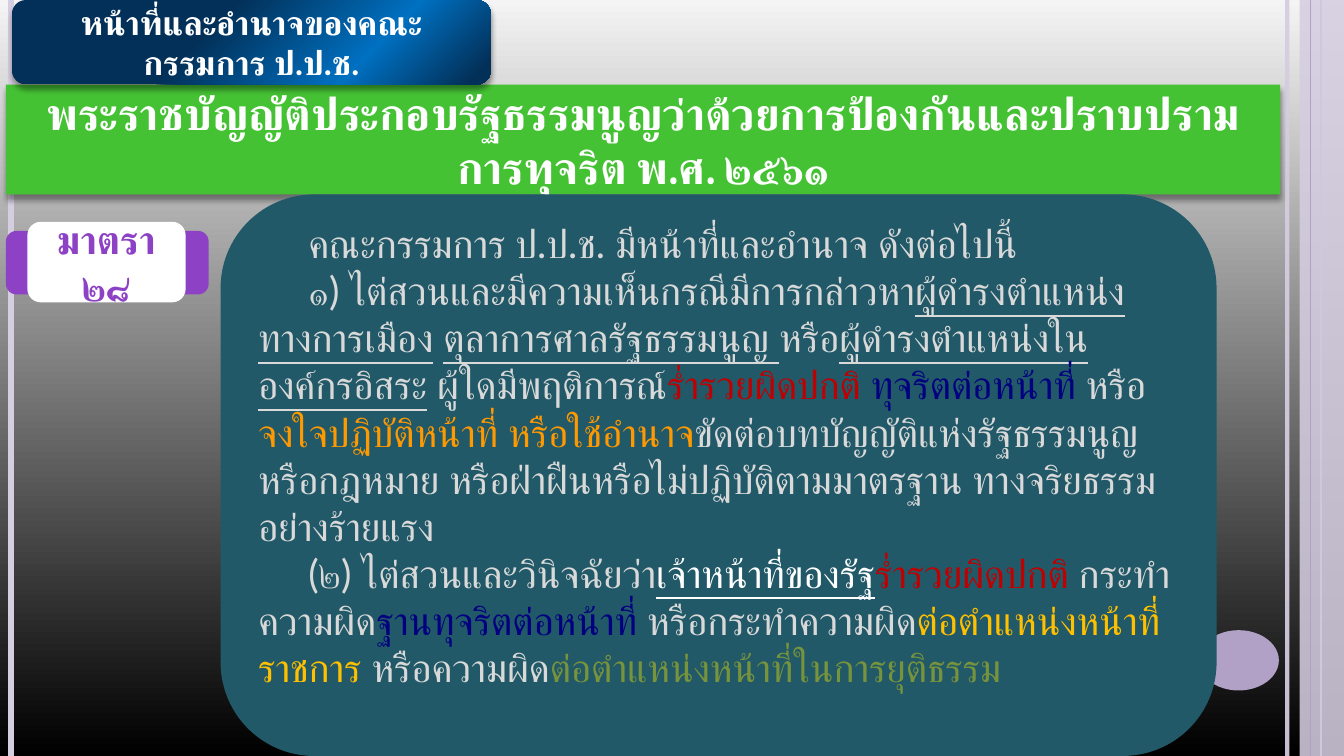
from copy import deepcopy
from dataclasses import dataclass

from lxml import etree
from pptx import Presentation
from pptx.dml.color import RGBColor
from pptx.enum import shapes, text
from pptx.oxml import ns
from pptx.util import Cm, Pt


@dataclass(frozen=True)
class Theme:
    heading: str = "Cambria"
    body: str = "Lato"
    title_pt: int = 32
    body_pt: int = 28
    tag_pt: int = 24
    white: str = "FFFFFF"
    light: str = "D9D9D9"
    green: str = "45C234"
    purple: str = "8D42C6"
    teal: str = "215968"
    lilac: str = "B2A1C7"
    pale: str = "D5CDE0"
    red: str = "C00000"
    navy: str = "000080"
    orange: str = "FF9900"
    gold: str = "FFC000"
    olive: str = "77933C"
    back: tuple = ((0, "000000"), (100, "F4F4F4"))
    tag: tuple = ((40, "023058"), (73, "0070C0"), (96, "023058"))


T = Theme()
WIDTH, HEIGHT = 33.87, 19.05

TITLE = "พระราชบัญญัติประกอบรัฐธรรมนูญว่าด้วยการป้องกันและปราบปราม\vการทุจริต พ.ศ. ๒๕๖๑"
# Each paragraph is a list of (wording, colour, underlined).
DUTIES = [
    [("\tคณะกรรมการ ป.ป.ช. มีหน้าที่และอำนาจ ดังต่อไปนี้", T.light, False)],
    [
        ("\t๑) ไต่สวนและมีความเห็นกรณีมีการกล่าวหา", T.light, False),
        ("ผู้ดำรงตำแหน่งทางการเมือง", T.light, True),
        (" ", T.light, False),
        ("ตุลาการศาลรัฐธรรมนูญ ", T.light, True),
        ("หรือ", T.light, False),
        ("ผู้ดำรงตำแหน่งในองค์กรอิสระ", T.light, True),
        (" ผู้ใดมีพฤติการณ์", T.light, False),
        ("ร่ำรวยผิดปกติ ", T.red, False),
        ("ทุจริตต่อหน้าที่ ", T.navy, False),
        ("หรือ", T.light, False),
        ("จงใจปฏิบัติหน้าที่ หรือใช้อำนาจ", T.orange, False),
        ("ขัดต่อบทบัญญัติแห่งรัฐธรรมนูญหรือกฎหมาย หรือฝ่าฝืนหรือไม่ปฏิบัติตามมาตรฐาน "
         "ทางจริยธรรมอย่างร้ายแรง", T.light, False),
    ],
    [
        ("\t(๒) ไต่สวนและวินิจฉัยว่า", T.light, False),
        ("เจ้าหน้าที่ของรัฐ", T.white, True),
        ("ร่ำรวยผิดปกติ", T.red, False),
        (" กระทำความผิด", T.light, False),
        ("ฐานทุจริตต่อหน้าที่ ", T.navy, False),
        ("หรือกระทำความผิด", T.light, False),
        ("ต่อตำแหน่งหน้าที่ราชการ ", T.gold, False),
        ("หรือความผิด", T.light, False),
        ("ต่อตำแหน่งหน้าที่ในการยุติธรรม", T.olive, False),
    ],
]


def rgb(code):
    return RGBColor.from_string(code)


def sub(parent, tag, **attrs):
    return etree.SubElement(parent, ns.qn(tag), **attrs)


def set_alpha(fill, percent):
    color = fill._xPr.find(".//" + ns.qn("a:srgbClr"))
    sub(color, "a:alpha", val=str(percent * 1000))


def set_gradient(fill, stops, angle):
    fill.gradient()
    fill.gradient_angle = angle
    first = fill.gradient_stops[0]._gs
    for _ in stops[2:]:
        first.addnext(deepcopy(first))
    for stop, (position, color) in zip(fill.gradient_stops, stops):
        stop.position = position / 100
        stop.color.rgb = rgb(color)


def add_shadow(sp):
    effects = sp._element.spPr.find(ns.qn("a:effectLst"))
    if effects is None:
        effects = sub(sp._element.spPr, "a:effectLst")
    shadow = sub(effects, "a:outerShdw", blurRad=str(Pt(4)), dist=str(Pt(3)),
                 dir="5400000", rotWithShape="0")
    sub(sub(shadow, "a:srgbClr", val="000000"), "a:alpha", val="40000")


def add_block(parent, kind, box, color):
    sp = parent.add_shape(kind, *map(Cm, box))
    sp.shadow.inherit = False
    sp.line.fill.background()
    sp.fill.solid()
    sp.fill.fore_color.rgb = rgb(color)
    return sp


def place_rounded(s, sp, box, color):
    """Bring a placeholder to the front as a filled rounded rectangle."""
    s.shapes._spTree.append(sp._element)
    sp.left, sp.top, sp.width, sp.height = map(Cm, box)
    sub(sub(sp._element.spPr, "a:prstGeom", prst="roundRect"), "a:avLst")
    sp.fill.solid()
    sp.fill.fore_color.rgb = rgb(color)
    tf = sp.text_frame
    tf.auto_size = text.MSO_AUTO_SIZE.NONE
    tf.vertical_anchor = text.MSO_ANCHOR.MIDDLE
    return tf


def format_run(r, face, size, color, bold=False, underline=False):
    r.font.name, r.font.size = face, Pt(size)
    r.font.bold, r.font.underline = bold, underline
    r.font.color.rgb = rgb(color)
    sub(r.font._element, "a:cs", typeface=face)


def write_label(tf, wording, face, size, color):
    """Write one bold, centred paragraph."""
    tf.text = wording
    tf.word_wrap = True
    tf.vertical_anchor = text.MSO_ANCHOR.MIDDLE
    p = tf.paragraphs[0]
    p.alignment = text.PP_ALIGN.CENTER
    for r in p.runs:
        format_run(r, face, size, color, bold=True)


def draw_rule(s, x, color, weight):
    rule = s.shapes.add_connector(shapes.MSO_CONNECTOR.STRAIGHT, Cm(x), Cm(0), Cm(x), Cm(HEIGHT))
    rule.line.color.rgb = rgb(color)
    rule.line.width = Pt(weight)
    sub(rule._element.spPr, "a:effectLst")
    return rule


def draw_backdrop(s, width, height):
    set_gradient(s.background.fill, T.back, 90)
    inner = draw_rule(s, width - 1.43, T.pale, 3)
    set_alpha(inner.line.fill, 93)
    draw_rule(s, 0.28, T.pale, 4.5)
    draw_rule(s, width - 0.57, T.lilac, 1.5)
    strip = add_block(s.shapes, shapes.MSO_SHAPE.RECTANGLE, (width - 1.12, 0, 1.12, height), T.pale)
    set_alpha(strip.fill, 87)
    draw_rule(s, width - 0.85, T.lilac, 0.75)
    add_block(s.shapes, shapes.MSO_SHAPE.OVAL, (width - 3.67, height - 3.17, 2.03, 1.52), T.lilac)


def draw_title(s, box):
    tf = place_rounded(s, s.shapes.title, box, T.green)
    add_shadow(s.shapes.title)
    write_label(tf, TITLE, T.heading, T.title_pt, T.white)


def draw_section_badge(s, x, y, w, h):
    group = s.shapes.add_group_shape().shapes
    rounded = shapes.MSO_SHAPE.ROUNDED_RECTANGLE
    add_block(group, rounded, (x, y + 0.23, w, h - 0.43), T.purple)
    plate = add_block(group, rounded, (x + 0.54, y, w - 1.12, h), T.white)
    write_label(plate.text_frame, "มาตรา ๒๘", T.body, T.body_pt, T.purple)


def draw_duties(s, box):
    tf = place_rounded(s, s.placeholders[1], box, T.teal)
    tf.margin_bottom = Cm(1.15)
    for i, parts in enumerate(DUTIES):
        p = tf.paragraphs[0] if i == 0 else tf.add_paragraph()
        p.alignment = text.PP_ALIGN.LEFT
        p.space_before = Pt(0)
        pPr = p._p.get_or_add_pPr()
        pPr.set("marL", "0")
        pPr.set("indent", "0")
        sub(pPr, "a:buNone")
        for wording, color, underline in parts:
            r = p.add_run()
            r.text = wording
            format_run(r, T.body, T.body_pt, color, underline=underline)


def draw_topic_tag(s, box):
    tag = add_block(s.shapes, shapes.MSO_SHAPE.ROUNDED_RECTANGLE, box, T.white)
    set_gradient(tag.fill, T.tag, 315)
    add_shadow(tag)
    write_label(tag.text_frame, "หน้าที่และอำนาจของคณะกรรมการ ป.ป.ช.", T.body, T.tag_pt, T.white)


def main():
    prs = Presentation()
    prs.slide_width, prs.slide_height = Cm(WIDTH), Cm(HEIGHT)
    s = prs.slides.add_slide(prs.slide_layouts[1])
    draw_backdrop(s, WIDTH, HEIGHT)
    draw_title(s, (0.15, 2.13, 32.11, 2.77))
    draw_section_badge(s, 0.15, 5.59, 5.11, 2.03)
    draw_duties(s, (5.56, 4.9, 25.1, 14.15))
    draw_topic_tag(s, (0.3, 0, 12.07, 2.13))
    prs.save("out.pptx")


if __name__ == "__main__":
    main()
